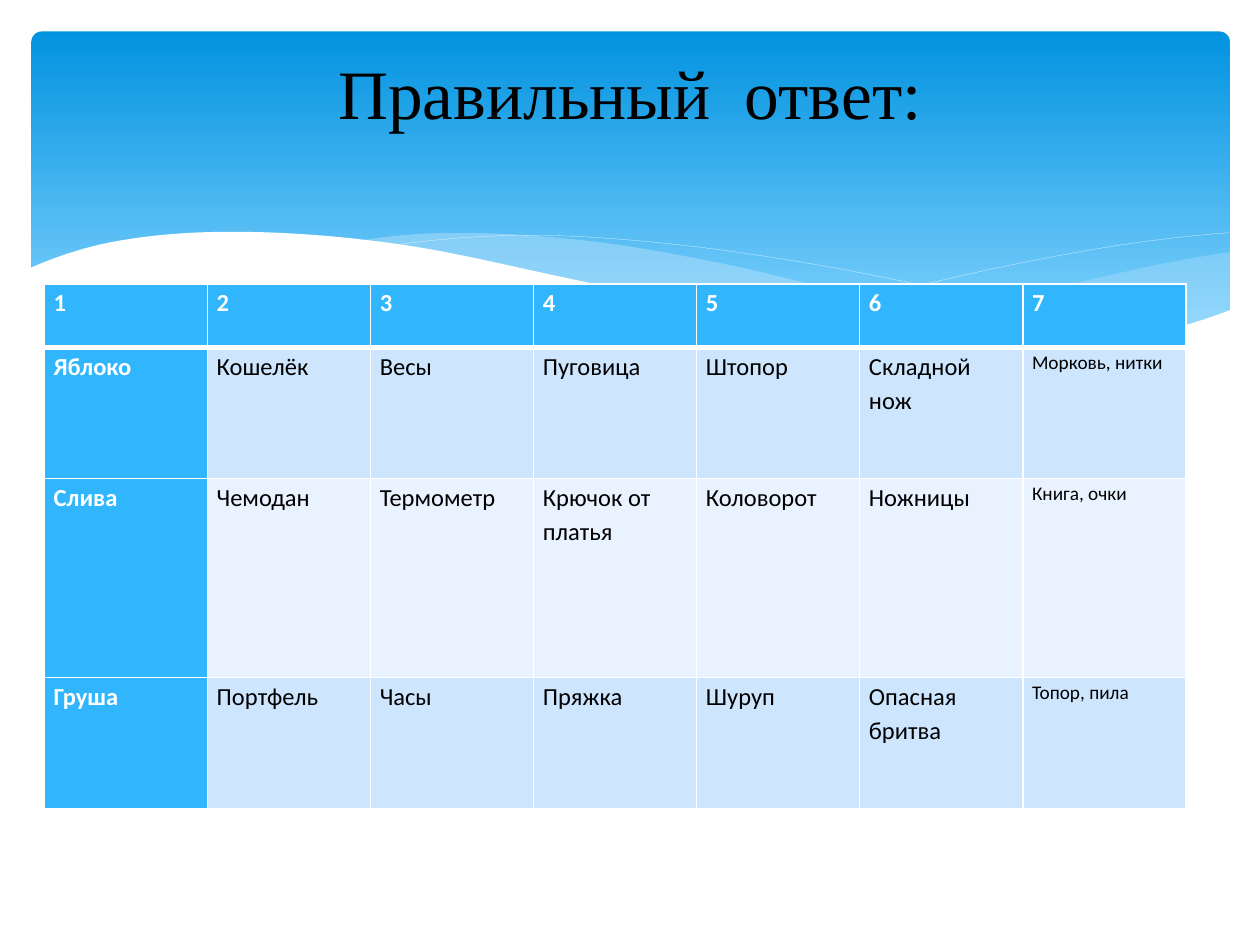
from lxml import etree
from pptx import Presentation
from pptx.dml.color import RGBColor
from pptx.enum import shapes, text
from pptx.oxml import ns
from pptx.util import Pt

TITLE = "Правильный  ответ:"
ANSWERS = [
    ["1", "2", "3", "4", "5", "6", "7"],
    ["Яблоко", "Кошелёк", "Весы", "Пуговица", "Штопор", "Складной нож", "Морковь, нитки"],
    ["Слива", "Чемодан", "Термометр", "Крючок от платья", "Коловорот", "Ножницы", "Книга, очки"],
    ["Груша", "Портфель", "Часы", "Пряжка", "Шуруп", "Опасная бритва", "Топор, пила"],
]
ROW_HEIGHTS = [36.4, 74.9, 113.8, 74.9]
COLUMN_WIDTH = 93.2
BODY_FILLS = ["E8F3FF", "CEE5FE"]
BANNER_STOPS = [(0, "0293E0"), (0.9, "83D3FE")]
ACCENT, WHITE, BLACK, MIST = "31B6FD", "FFFFFF", "000000", "C6E7FC"

RIGHT_WAVE = {
    "crest": [(476, 191), (542, 178.5), (620, 160.5), (663, 151), (703, 144)],
    "base": [(476, 191), (536, 198), (586, 200), (640, 196), (673, 188.5), (703, 178)],
    "color": MIST, "opacity": 29,
}
MIDDLE_WAVE = {
    "crest": [(206, 137.5), (260, 133), (335, 137.5), (410, 150), (481, 166.5), (558, 183), (643, 196.5)],
    "base": [(206, 137.5), (291, 152), (382, 173), (468, 190), (530, 198), (589, 200), (643, 196.5)],
    "color": MIST, "opacity": 40,
}
PAGE_WAVE = {
    "crest": [(16.5, 153.5), (68.5, 137.5), (139, 132.5), (227.5, 139.5), (322, 158.5),
              (434, 183), (523, 196), (592.5, 199.5), (647, 193.5), (703.5, 177)],
    "base": [(16.5, 237), (703.5, 237)],
    "color": WHITE, "opacity": 100,
}
LONG_RIPPLE = [(222.5, 140.5), (299.5, 134.5), (384, 139.5), (479, 153.5), (572, 173.5), (653, 196)]
SHORT_RIPPLE = [(441, 185), (518, 165), (580, 151), (644, 139.5), (702, 133)]
STEPS_PER_SPAN = 10
UNITS_PER_POINT = 100


def rgb(value):
    return RGBColor.from_string(value)


def style_run(run, size, font, color, bold=False):
    run.font.size = Pt(size)
    run.font.name = font
    run.font.color.rgb = rgb(color)
    run.font.bold = bold


def slope(start, end):
    return (end[1] - start[1]) / (end[0] - start[0])


def smooth(knots):
    spans = [slope(a, b) for a, b in zip(knots, knots[1:])]
    inner = [slope(a, b) for a, b in zip(knots, knots[2:])]
    first = 2 * spans[0] - inner[0] if inner else spans[0]
    last = 2 * spans[-1] - inner[-1] if inner else spans[-1]
    slopes = [first, *inner, last]
    curve = [knots[0]]
    for (x0, y0), (x1, y1), m0, m1 in zip(knots, knots[1:], slopes, slopes[1:]):
        width = x1 - x0
        for step in range(1, STEPS_PER_SPAN + 1):
            t = step / STEPS_PER_SPAN
            blend = t * t * (3 - 2 * t)
            bend = t * (1 - t) * ((1 - t) * m0 - t * m1)
            curve.append((x0 + t * width, y0 + blend * (y1 - y0) + width * bend))
    return curve


def add_outline(slide, points, closed):
    units = [(x * UNITS_PER_POINT, y * UNITS_PER_POINT) for x, y in points]
    builder = slide.shapes.build_freeform(*units[0], scale=Pt(1) / UNITS_PER_POINT)
    builder.add_line_segments(units[1:], close=closed)
    outline = builder.convert_to_shape()
    outline.shadow.inherit = False
    return outline


def add_wave(slide, crest, base, color, opacity):
    wave = add_outline(slide, smooth(crest) + smooth(base)[::-1], True)
    wave.fill.solid()
    wave.fill.fore_color.rgb = rgb(color)
    wave.line.fill.background()
    tint = wave._element.spPr.find(ns.qn("a:solidFill")).find(ns.qn("a:srgbClr"))
    etree.SubElement(tint, ns.qn("a:alpha"), val=str(opacity * 1000))


def add_ripple(slide, knots):
    ripple = add_outline(slide, smooth(knots), False)
    ripple.fill.background()
    ripple.line.color.rgb = rgb(WHITE)
    ripple.line.width = Pt(0.1)


def add_banner(slide):
    banner = slide.shapes.add_shape(
        shapes.MSO_SHAPE.ROUNDED_RECTANGLE, Pt(18), Pt(18), Pt(684.7), Pt(194.4))
    banner.adjustments[0] = 0.03
    banner.shadow.inherit = False
    banner.line.fill.background()
    banner.fill.gradient()
    banner.fill.gradient_angle = 270
    for stop, (position, color) in zip(banner.fill.gradient_stops, BANNER_STOPS):
        stop.position = position
        stop.color.rgb = rgb(color)


def set_borders(cell, widths):
    properties = cell._tc.get_or_add_tcPr()
    for index, (side, width) in enumerate(widths.items()):
        border = etree.Element(ns.qn("a:ln" + side), w=str(Pt(width)))
        fill = etree.SubElement(border, ns.qn("a:solidFill"))
        etree.SubElement(fill, ns.qn("a:srgbClr"), val=WHITE)
        properties.insert(index, border)


def add_answers(slide):
    columns = len(ANSWERS[0])
    table = slide.shapes.add_table(
        len(ANSWERS), columns, Pt(25.4), Pt(162.2),
        Pt(COLUMN_WIDTH * columns), Pt(sum(ROW_HEIGHTS))).table
    for column in table.columns:
        column.width = Pt(COLUMN_WIDTH)
    for r, (row, height) in enumerate(zip(ANSWERS, ROW_HEIGHTS)):
        table.rows[r].height = Pt(height)
        for c, answer in enumerate(row):
            cell = table.cell(r, c)
            heading = r == 0 or c == 0
            cell.margin_left = cell.margin_right = Pt(5.3)
            cell.margin_top = cell.margin_bottom = 0
            cell.fill.solid()
            cell.fill.fore_color.rgb = rgb(ACCENT if heading else BODY_FILLS[r % 2])
            set_borders(cell, {"L": 1, "R": 1, "T": 3 if r == 1 else 1, "B": 3 if r == 0 else 1})
            cell.text_frame.text = answer
            paragraph = cell.text_frame.paragraphs[0]
            paragraph.line_spacing = 1.15
            size = 11 if r > 0 and c == columns - 1 else 14
            style_run(paragraph.runs[0], size, "Calibri", WHITE if heading else BLACK, heading)


def place_title(slide):
    title = slide.shapes.title
    title.left, title.top, title.width, title.height = Pt(36), Pt(25), Pt(648), Pt(98.6)
    frame = title.text_frame
    frame.text = TITLE
    frame.word_wrap = True
    frame.vertical_anchor = text.MSO_ANCHOR.TOP
    frame.paragraphs[0].alignment = text.PP_ALIGN.CENTER
    style_run(frame.paragraphs[0].runs[0], 39.6, "Times New Roman", BLACK)
    slide.shapes._spTree.append(title._element)


def main():
    deck = Presentation()
    deck.slide_width, deck.slide_height = Pt(720), Pt(540)
    slide = deck.slides.add_slide(deck.slide_layouts[5])
    add_banner(slide)
    for wave in (RIGHT_WAVE, MIDDLE_WAVE):
        add_wave(slide, **wave)
    for ripple in (LONG_RIPPLE, SHORT_RIPPLE):
        add_ripple(slide, ripple)
    add_wave(slide, **PAGE_WAVE)
    add_answers(slide)
    place_title(slide)
    deck.save("out.pptx")


if __name__ == "__main__":
    main()
